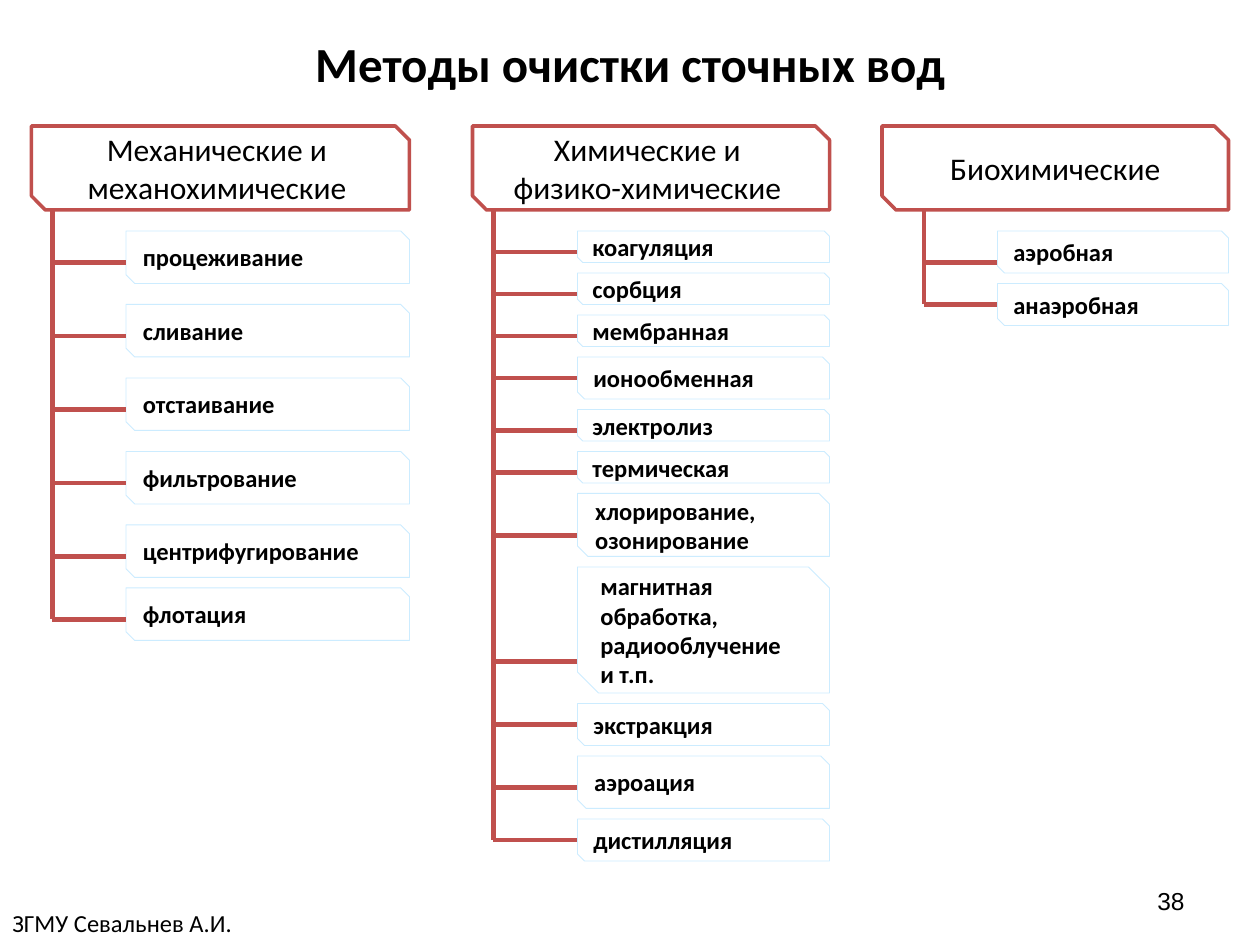
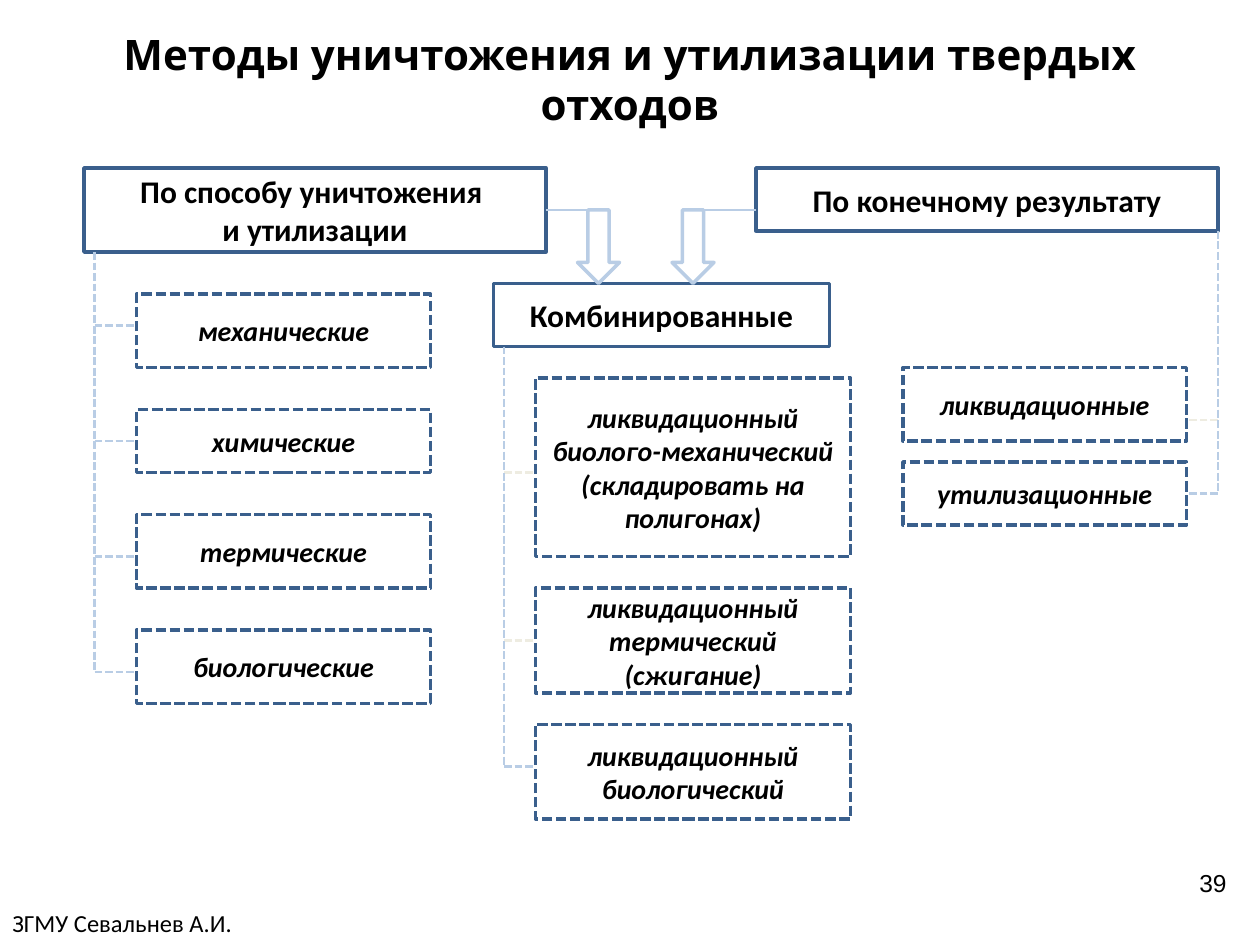
from dataclasses import dataclass

from lxml import etree
from pptx import Presentation
from pptx import util as u
from pptx.dml.color import RGBColor
from pptx.enum import dml, shapes, text
from pptx.oxml.ns import qn

EMU_PER_PX = 7620  # 120 px to the inch
COLORS = {
    "text": "000000",
    "red": "C0504D",
    "ice": "CCECFF",
    "navy": "3A5F8C",
    "sky": "B9CDE5",
    "sand": "EEECE1",
}
LEFT, CENTER, RIGHT = text.PP_ALIGN.LEFT, text.PP_ALIGN.CENTER, text.PP_ALIGN.RIGHT
SNIPPED = shapes.MSO_SHAPE.SNIP_2_DIAG_RECTANGLE
RECTANGLE = shapes.MSO_SHAPE.RECTANGLE
SIDE_LEFT, SIDE_RIGHT = 1, 3
FOOTER = "ЗГМУ Севальнев А.И."


@dataclass(frozen=True)
class Stroke:
    color: str
    width: float
    dashed: bool = False


@dataclass(frozen=True)
class Box:
    left: int
    top: int
    width: int
    height: int

    @property
    def right(self) -> int:
        return self.left + self.width

    @property
    def bottom(self) -> int:
        return self.top + self.height

    @property
    def middle(self) -> int:
        return self.top + self.height // 2


@dataclass(frozen=True)
class Method:
    """A box below a heading; its branch meets it `branch` px below its top."""
    label: str
    height: int
    branch: int
    gap: int | None = None
    branch_color: str | None = None


@dataclass(frozen=True)
class Group:
    heading: str
    box: Box
    trunk: int
    left: int
    top: int
    width: int
    gap: int
    methods: list[Method]


@dataclass(frozen=True)
class Style:
    shape: int
    heading_stroke: Stroke
    method_stroke: Stroke
    branch_stroke: Stroke
    heading_format: dict
    method_format: dict


@dataclass(frozen=True)
class Page:
    title: str
    title_box: Box
    title_format: dict
    number: str
    number_box: Box
    style: Style
    groups: list[Group]


WATER_STYLE = Style(
    SNIPPED, Stroke("red", 2), Stroke("ice", 0.5), Stroke("red", 2.5),
    dict(size=18), dict(size=14, bold=True, align=LEFT),
)
WASTE_STYLE = Style(
    RECTANGLE, Stroke("navy", 2), Stroke("navy", 2, True), Stroke("sky", 1.5, True),
    dict(size=18, bold=True), dict(size=16, bold=True, italic=True),
)

WATER = Page(
    "Методы очистки сточных вод", Box(60, 20, 1080, 80), dict(size=28),
    "38", Box(860, 834, 280, 48), WATER_STYLE,
    [
        Group("Механические и \nмеханохимические ", Box(30, 120, 360, 80),
              50, 120, 220, 270, 20, [
                  Method("процеживание", 50, 30),
                  Method("сливание", 50, 30),
                  Method("отстаивание", 50, 30),
                  Method("фильтрование", 50, 30),
                  Method("центрифугирование", 50, 30),
                  Method("флотация", 50, 30, gap=10),
              ]),
        Group("Химические и \nфизико-химические ", Box(450, 120, 340, 80),
              470, 550, 220, 240, 10, [
                  Method("коагуляция", 30, 20),
                  Method("сорбция", 30, 20),
                  Method("мембранная", 30, 20),
                  Method("ионообменная", 40, 20),
                  Method("электролиз", 30, 20),
                  Method("термическая", 30, 20),
                  Method("хлорирование,\nозонирование", 60, 40),
                  Method("магнитная обработка, радиооблучение\nи т.п.", 120, 90),
                  Method("экстракция", 40, 20),
                  Method("аэроация", 50, 30),
                  Method("дистилляция", 40, 20),
              ]),
        Group("Биохимические", Box(840, 120, 330, 80),
              880, 950, 220, 220, 10, [
                  Method("аэробная", 40, 30),
                  Method("анаэробная", 40, 20),
              ]),
    ],
)

WASTE = Page(
    "Методы уничтожения и утилизации твердых отходов", Box(60, 20, 1080, 110),
    dict(size=24, font="Karla"), "39", Box(900, 810, 280, 62), WASTE_STYLE,
    [
        Group("По способу уничтожения \nи утилизации", Box(80, 160, 440, 80),
              90, 130, 280, 280, 40, [
                  Method("механические", 70, 30),
                  Method("химические", 60, 30),
                  Method("термические", 70, 40),
                  Method("биологические", 70, 40),
              ]),
        Group("Комбинированные", Box(470, 270, 320, 60),
              480, 510, 360, 300, 30, [
                  Method("ликвидационный биолого-механический (складировать на полигонах)",
                         170, 90, branch_color="sand"),
                  Method("ликвидационный термический (сжигание)", 100, 50,
                         branch_color="sand"),
                  Method("ликвидационный биологический", 90, 40),
              ]),
        Group("По конечному результату", Box(720, 160, 440, 60),
              1160, 860, 350, 270, 20, [
                  Method("ликвидационные", 70, 50, branch_color="sand"),
                  Method("утилизационные", 60, 30),
              ]),
    ],
)


def emu(*lengths: int) -> list[u.Emu]:
    return [u.Emu(length * EMU_PER_PX) for length in lengths]


def place(box: Box) -> list[u.Emu]:
    return emu(box.left, box.top, box.width, box.height)


def write(shape, content: str, *, size: int, font: str = "Calibri", bold: bool = False,
          italic: bool = False, align=CENTER, anchor=text.MSO_ANCHOR.MIDDLE) -> None:
    """Fill a shape with text, one paragraph to a line."""
    frame = shape.text_frame
    frame.word_wrap = True
    frame.vertical_anchor = anchor
    for index, line in enumerate(content.split("\n")):
        paragraph = frame.add_paragraph() if index else frame.paragraphs[0]
        paragraph.alignment = align
        run = paragraph.add_run()
        run.text = line
        run.font.name = font
        run.font.size = u.Pt(size)
        run.font.bold = bold
        run.font.italic = italic
        run.font.color.rgb = RGBColor.from_string(COLORS["text"])


def apply_stroke(line, stroke: Stroke) -> None:
    line.color.rgb = RGBColor.from_string(COLORS[stroke.color])
    line.width = u.Pt(stroke.width)
    if stroke.dashed:
        line.dash_style = dml.MSO_LINE.SQUARE_DOT


def add_text(slide, box: Box, content: str, **format_options):
    shape = slide.shapes.add_textbox(*place(box))
    write(shape, content, **format_options)
    return shape


def add_outline(slide, kind, box: Box, stroke: Stroke):
    shape = slide.shapes.add_shape(kind, *place(box))
    shape.shadow.inherit = False
    shape.fill.background()
    apply_stroke(shape.line, stroke)
    return shape


def add_line(slide, x1: int, y1: int, x2: int, y2: int, stroke: Stroke):
    connector = slide.shapes.add_connector(
        shapes.MSO_CONNECTOR.STRAIGHT, *emu(x1, y1, x2, y2))
    apply_stroke(connector.line, stroke)
    etree.SubElement(connector._element.spPr, qn("a:effectLst"))
    return connector


def add_group(slide, group: Group, style: Style):
    """Draw a heading with its methods, branches and trunk; return the heading."""
    heading = add_outline(slide, style.shape, group.box, style.heading_stroke)
    write(heading, group.heading, **style.heading_format)

    bottom = group.top
    for index, method in enumerate(group.methods):
        gap = group.gap if method.gap is None else method.gap
        top = bottom + gap if index else group.top
        box = Box(group.left, top, group.width, method.height)
        shape = add_outline(slide, style.shape, box, style.method_stroke)
        write(shape, method.label, **style.method_format)

        on_left = group.trunk < box.left
        edge = box.left if on_left else box.right
        branch_y = top + method.branch
        stroke = style.branch_stroke
        if method.branch_color:
            stroke = Stroke(method.branch_color, stroke.width, stroke.dashed)
        branch = add_line(slide, group.trunk, branch_y, edge, branch_y, stroke)
        if style.shape == RECTANGLE and branch_y == box.middle:
            branch.end_connect(shape, SIDE_LEFT if on_left else SIDE_RIGHT)
        bottom = box.bottom

    add_line(slide, group.trunk, group.box.bottom, group.trunk, branch_y,
             style.branch_stroke)
    return heading


def add_page(presentation, page: Page):
    """Add a slide with its footer, number, title and groups; return it with its headings."""
    slide = presentation.slides.add_slide(presentation.slide_layouts[6])
    footer = add_text(slide, Box(0, 859, 326, 41), FOOTER, size=14, align=LEFT,
                      anchor=text.MSO_ANCHOR.TOP)
    footer.text_frame.auto_size = text.MSO_AUTO_SIZE.SHAPE_TO_FIT_TEXT
    add_text(slide, page.number_box, page.number, size=14, font="Arial", align=RIGHT)
    add_text(slide, page.title_box, page.title, bold=True, **page.title_format)
    return slide, [add_group(slide, group, page.style) for group in page.groups]


def add_merging_arrows(slide, left_heading) -> None:
    """Lead both outer headings down into the combined one."""
    for left in (550, 640):
        add_outline(slide, shapes.MSO_SHAPE.DOWN_ARROW, Box(left, 200, 40, 70),
                    Stroke("sky", 2))
    left_link = add_line(slide, 520, 200, 570, 200, Stroke("sky", 1.5))
    left_link.begin_connect(left_heading, SIDE_RIGHT)
    add_line(slide, 670, 200, 720, 200, Stroke("sky", 1.5))


def main() -> None:
    presentation = Presentation()
    presentation.slide_width, presentation.slide_height = emu(1200, 900)
    add_page(presentation, WATER)
    waste_slide, headings = add_page(presentation, WASTE)
    add_merging_arrows(waste_slide, headings[0])
    presentation.save("out.pptx")


if __name__ == "__main__":
    main()
